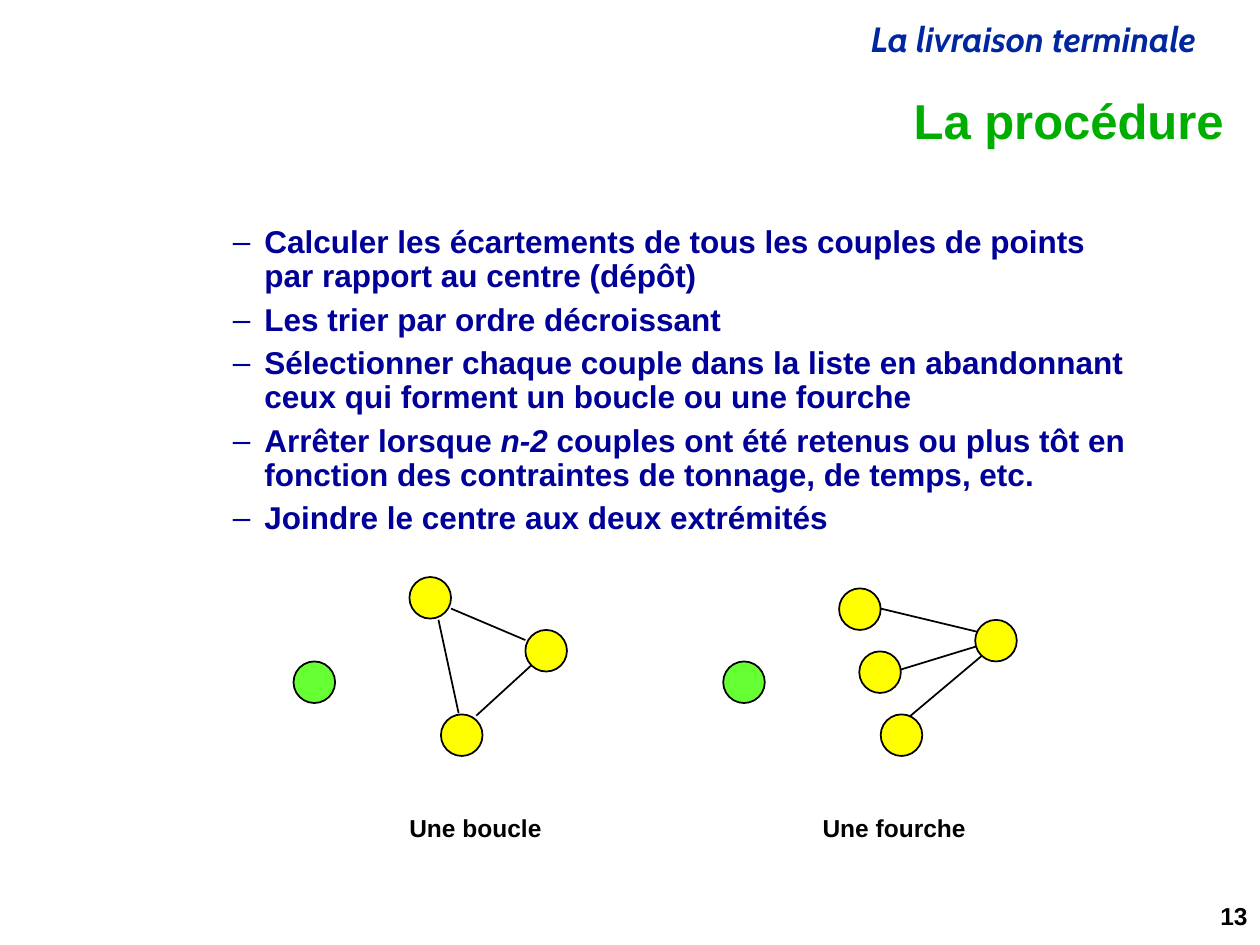
from dataclasses import dataclass

from lxml.etree import SubElement
from pptx import Presentation
from pptx.dml.color import RGBColor
from pptx.enum.shapes import MSO_CONNECTOR, MSO_SHAPE
from pptx.enum.text import MSO_ANCHOR, PP_ALIGN
from pptx.oxml.ns import qn
from pptx.util import Inches, Pt


@dataclass(frozen=True)
class Theme:
    font: str = "Arial"
    header_font: str = "Cabin"
    header_color: str = "00279F"
    title_color: str = "00AE00"
    body_color: str = "000099"
    ink: str = "000000"
    point: str = "FFFF00"
    depot: str = "66FF33"
    header_size: int = 20
    title_size: int = 28
    body_size: int = 18
    label_size: int = 14


theme = Theme()

presentation = Presentation()
presentation.slide_width = Inches(10)
presentation.slide_height = Inches(7.5)
slide = presentation.slides.add_slide(presentation.slide_layouts[6])


def add_text(box, size, color, lines, align=PP_ALIGN.LEFT, name=theme.font, wrap=True):
    """Add bold text; each line is a list of runs, every second one italic."""
    frame = slide.shapes.add_textbox(*map(Inches, box)).text_frame
    frame.word_wrap = wrap
    for index, runs in enumerate(lines):
        paragraph = frame.paragraphs[0] if index == 0 else frame.add_paragraph()
        paragraph.alignment = align
        paragraph.line_spacing = 0.9
        paragraph.font.name = name
        paragraph.font.size = Pt(size)
        paragraph.font.bold = True
        paragraph.font.color.rgb = RGBColor.from_string(color)
        for position, text in enumerate(runs):
            run = paragraph.add_run()
            run.text = text
            if position % 2:
                run.font.italic = True
    return frame


header = add_text((4.84, 0.13, 4.75, 0.4), theme.header_size, theme.header_color,
                  [["La livraison terminale"]], PP_ALIGN.RIGHT, theme.header_font)
header.paragraphs[0].font.italic = True
add_text((7.75, 7.13, 2.25, 0.4), theme.label_size, theme.ink, [["13"]], PP_ALIGN.RIGHT)
title = add_text((1.23, 0.73, 8.58, 0.5), theme.title_size, theme.title_color,
                 [["La procédure"]], PP_ALIGN.RIGHT)
title.vertical_anchor = MSO_ANCHOR.MIDDLE

steps = [
    ["Calculer les écartements de tous les couples de points par rapport au centre (dépôt)"],
    ["Les trier par ordre décroissant"],
    ["Sélectionner chaque couple dans la liste en abandonnant ceux qui forment "
     "un boucle ou une fourche"],
    ["Arrêter lorsque ", "n-2", " couples ont été retenus ou plus tôt en fonction "
     "des contraintes de tonnage, de temps, etc."],
    ["Joindre le centre aux deux extrémités"],
]
body = add_text((1.25, 1.75, 7.92, 2.67), theme.body_size, theme.body_color, steps)
for index, paragraph in enumerate(body.paragraphs):
    paragraph.space_before = Pt(0.3 * theme.body_size if index else 0)
    properties = paragraph._p.get_or_add_pPr()
    properties.set("marL", str(Inches(0.75)))
    properties.set("indent", str(Inches(-0.25)))
    SubElement(properties, qn("a:buFont")).set("typeface", theme.font)
    SubElement(properties, qn("a:buChar")).set("char", "–")

# Each graph: caption and its box, depot corner, point corners, edges
graphs = [
    ("Une boucle", (3.15, 6.43, 1.25, 0.31), (2.33, 5.25),
     [(3.5, 5.67), (4.17, 5), (3.25, 4.58)],
     [(3.48, 4.92, 3.64, 5.66), (3.58, 4.83, 4.17, 5.08), (4.25, 5.25, 3.78, 5.68)]),
    ("Une fourche", (6.43, 6.43, 1.34, 0.31), (5.74, 5.25),
     [(6.66, 4.67), (6.82, 5.17), (6.99, 5.67), (7.74, 4.92)],
     [(6.99, 4.83, 7.78, 5.02), (7.81, 5.19, 7.18, 5.72), (7.75, 5.13, 7.13, 5.32)]),
]
diameter = Inches(0.33)
for caption, caption_box, depot, points, edges in graphs:
    for edge in edges:
        line = slide.shapes.add_connector(MSO_CONNECTOR.STRAIGHT, *map(Inches, edge))
        line.line.color.rgb = RGBColor.from_string(theme.ink)
        line.line.width = Pt(1)
        SubElement(line._element.spPr, qn("a:effectLst"))
    add_text(caption_box, theme.label_size, theme.ink, [[caption]], wrap=False)
    nodes = [(depot, theme.depot)] + [(point, theme.point) for point in points]
    for (left, top), color in nodes:
        node = slide.shapes.add_shape(MSO_SHAPE.OVAL, Inches(left), Inches(top),
                                      diameter, diameter)
        node.shadow.inherit = False
        node.fill.solid()
        node.fill.fore_color.rgb = RGBColor.from_string(color)
        node.line.color.rgb = RGBColor.from_string(theme.ink)
        node.line.width = Pt(1)

presentation.save("out.pptx")
